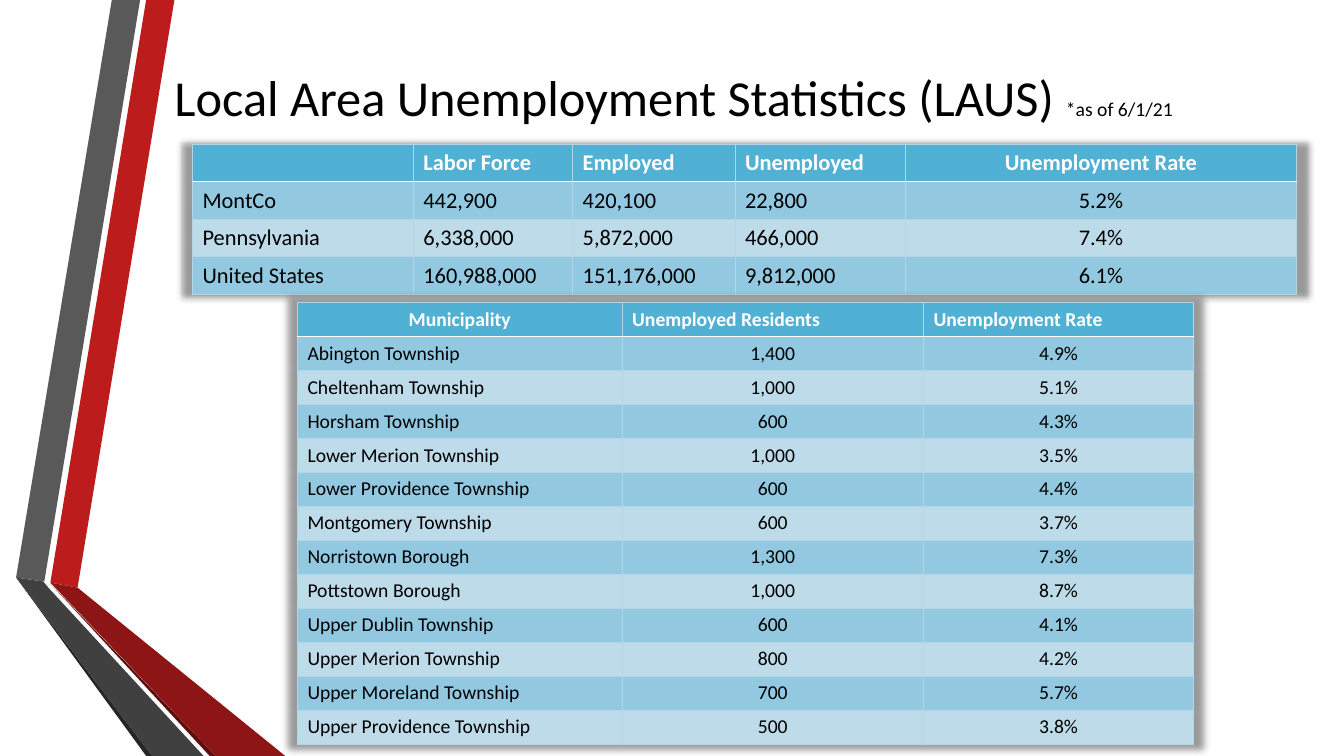
from lxml import etree
from pptx import Presentation
from pptx.dml.color import RGBColor
from pptx.enum.text import MSO_ANCHOR, MSO_AUTO_SIZE, PP_ALIGN
from pptx.oxml.ns import qn
from pptx.util import Inches, Pt

MIDDLE = MSO_ANCHOR.MIDDLE
LEFT, CENTER = PP_ALIGN.LEFT, PP_ALIGN.CENTER
NO_FIT = MSO_AUTO_SIZE.NONE
FONT = "Calibri"
HEADER, DARK_BAND, LIGHT_BAND = "50B1D4", "92C9E1", "BEDBE9"
GRID, WHITE, BLACK = "B3D5E6", "FFFFFF", "000000"


def color(hex_code):
    return RGBColor.from_string(hex_code)


def add_text(paragraph, text, size, hex_code, bold=False):
    run = paragraph.add_run()
    run.text = text
    run.font.name = FONT
    run.font.size = Pt(size)
    run.font.bold = bold
    run.font.color.rgb = color(hex_code)


prs = Presentation()
prs.slide_width, prs.slide_height = Inches(13.33), Inches(7.5)
slide = prs.slides.add_slide(prs.slide_layouts[5])

# Folded ribbons on the left
ribbons = [
    ("BC1C1C", [(0.5, 5.78), (0.77, 5.83), (1.73, 0), (1.45, 0)]),
    ("595959", [(1.39, 0), (1.11, 0), (0.16, 5.73), (0.44, 5.77)]),
    ("262626", [(0.16, 5.73), (1.45, 7.5), (1.51, 7.5)]),
    ("5E0E0E", [(0.5, 5.79), (2.08, 7.5), (2.14, 7.5)]),
    ("8D1515", [(0.5, 5.78), (2.14, 7.5), (2.83, 7.5), (0.77, 5.83)]),
    ("404040", [(2.02, 7.5), (0.48, 5.83), (0.43, 5.77), (0.16, 5.73), (1.51, 7.5)]),
]
for fill, corners in ribbons:
    points = [(Inches(x), Inches(y)) for x, y in corners]
    outline = slide.shapes.build_freeform(*points[0])
    outline.add_line_segments(points[1:], close=True)
    ribbon = outline.convert_to_shape()
    ribbon.shadow.inherit = False
    ribbon.fill.solid()
    ribbon.fill.fore_color.rgb = color(fill)
    ribbon.line.fill.background()

# Title with its date note
title = slide.shapes.title
title.left, title.top = Inches(1.63), Inches(0.58)
title.width, title.height = Inches(10.96), Inches(0.76)
title.text_frame.auto_size = NO_FIT
title.text_frame.word_wrap = True
title.text_frame.vertical_anchor = MIDDLE
heading = title.text_frame.paragraphs[0]
heading.alignment = LEFT
add_text(heading, "Local Area Unemployment Statistics (LAUS) ", 36, BLACK)
add_text(heading, "*as of 6/1/21", 14, BLACK)

# Figures by region and by municipality
regions = [
    ("", "Labor Force", "Employed", "Unemployed", "Unemployment Rate"),
    ("MontCo", "442,900", "420,100", "22,800", "5.2%"),
    ("Pennsylvania", "6,338,000", "5,872,000", "466,000", "7.4%"),
    ("United States", "160,988,000", "151,176,000", "9,812,000", "6.1%"),
]
municipalities = [
    ("Municipality", "Unemployed Residents", "Unemployment Rate"),
    ("Abington Township", "1,400", "4.9%"),
    ("Cheltenham Township", "1,000", "5.1%"),
    ("Horsham Township", "600", "4.3%"),
    ("Lower Merion Township", "1,000", "3.5%"),
    ("Lower Providence Township", "600", "4.4%"),
    ("Montgomery Township", "600", "3.7%"),
    ("Norristown Borough", "1,300", "7.3%"),
    ("Pottstown Borough", "1,000", "8.7%"),
    ("Upper Dublin Township", "600", "4.1%"),
    ("Upper Merion Township", "800", "4.2%"),
    ("Upper Moreland Township", "700", "5.7%"),
    ("Upper Providence Township", "500", "3.8%"),
]

# Left, top, column widths, row height, text size, centred header and body columns
statistics = [
    (regions, 1.91, 1.43, [2.19, 1.58, 1.61, 1.69, 3.88], 0.37, 16, {4}, {4}),
    (municipalities, 2.95, 3, [3.22, 2.99, 2.68], 0.33, 14, {0}, {1, 2}),
]
for rows, left, top, widths, row_height, size, header_centered, body_centered in statistics:
    table = slide.shapes.add_table(
        len(rows), len(widths), Inches(left), Inches(top),
        Inches(sum(widths)), Inches(row_height * len(rows))).table
    for column, width in zip(table.columns, widths):
        column.width = Inches(width)

    # Soft shadow, slightly larger than the table
    effects = etree.Element(qn("a:effectLst"))
    shadow = etree.SubElement(effects, qn("a:outerShdw"), blurRad="63500",
                              sx="102000", sy="102000", algn="ctr", rotWithShape="0")
    shade = etree.SubElement(shadow, qn("a:srgbClr"), val=BLACK)
    etree.SubElement(shade, qn("a:alpha"), val="40000")
    table._tbl.tblPr.insert(0, effects)

    for r, values in enumerate(rows):
        table.rows[r].height = Inches(row_height)
        is_header = r == 0
        centered = header_centered if is_header else body_centered
        band = HEADER if is_header else DARK_BAND if r % 2 else LIGHT_BAND
        for c, value in enumerate(values):
            cell = table.cell(r, c)
            cell.vertical_anchor = MIDDLE
            cell.fill.solid()
            cell.fill.fore_color.rgb = color(band)
            paragraph = cell.text_frame.paragraphs[0]
            paragraph.alignment = CENTER if c in centered else LEFT
            if value:
                add_text(paragraph, value, size, WHITE if is_header else BLACK, is_header)
            else:
                etree.SubElement(paragraph._p, qn("a:endParaRPr"), sz=str(size * 100))

            # Thin grid, with a white rule under the header
            white_side = {0: "lnB", 1: "lnT"}.get(r)
            for position, side in enumerate(("lnL", "lnR", "lnT", "lnB")):
                stroke, weight = (WHITE, 1.25) if side == white_side else (GRID, 0.75)
                border = etree.Element(qn("a:" + side), w=str(Pt(weight)))
                paint = etree.SubElement(border, qn("a:solidFill"))
                etree.SubElement(paint, qn("a:srgbClr"), val=stroke)
                cell._tc.tcPr.insert(position, border)

prs.save("out.pptx")
